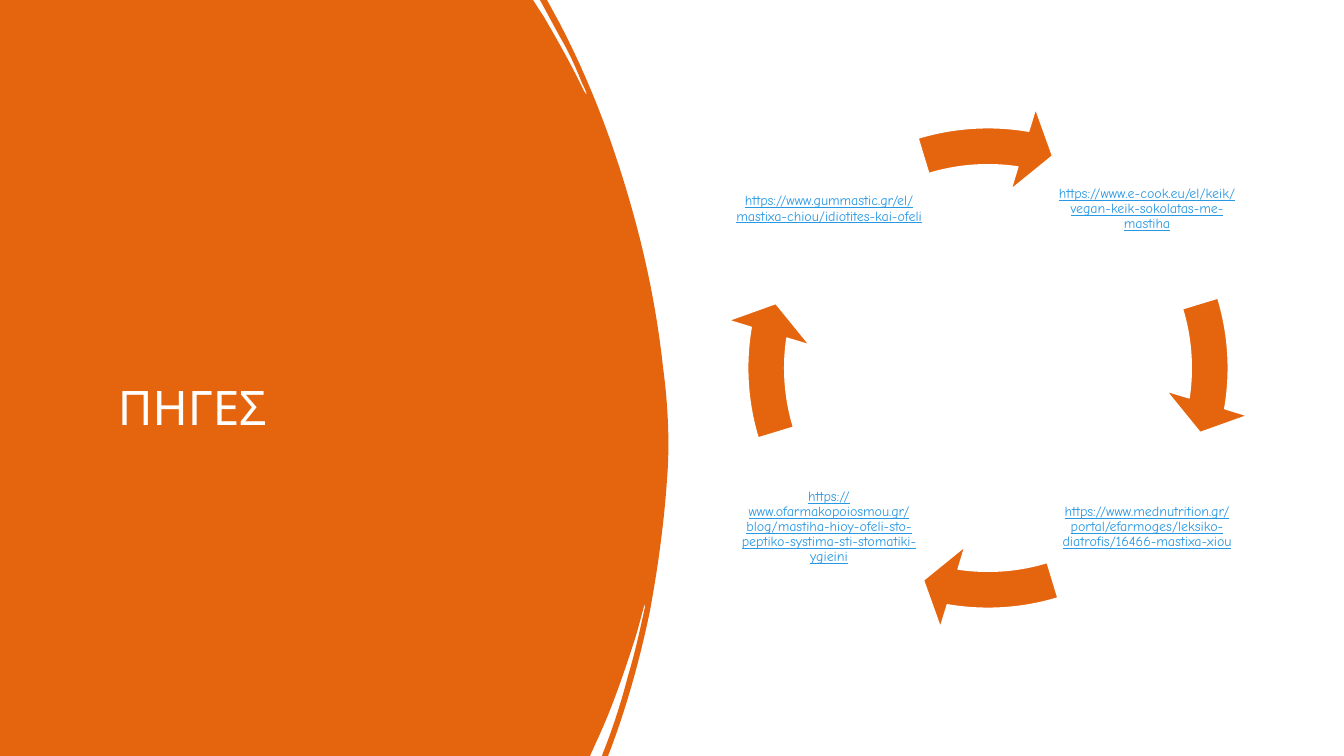
from lxml.etree import SubElement
from pptx import Presentation
from pptx.dml.color import RGBColor
from pptx.enum.shapes import MSO_SHAPE
from pptx.enum.text import MSO_ANCHOR, PP_ALIGN
from pptx.oxml.ns import qn
from pptx.util import Pt

PX = 914400 / 100.8
FONT = "Comic Neue"
ORANGE, WHITE, LINK = "E4650E", "FFFFFF", "2998E3"

PANEL_EDGE = [
    (533, 0), (544, 17),
    (558, 41, 572, 66, 584, 91), (585, 93, 586, 94, 587, 95),
    (586, 91, 584, 87, 582, 83), (576, 68, 569, 52, 560, 37),
    (540, 0), (547, 0), (559, 22),
    (581, 64, 599, 107, 614, 151), (638, 222, 655, 293, 663, 367),
    (668, 404, 670, 443, 667, 480), (664, 524, 658, 567, 650, 611),
    (640, 659, 627, 706, 610, 751),
    (608, 756), (602, 756), (603, 753),
    (613, 728, 621, 703, 628, 676), (635, 653, 640, 630, 645, 607),
    (645, 606, 645, 605, 645, 603), (641, 617, 638, 630, 634, 642),
    (624, 673, 613, 705, 600, 734),
    (590, 756), (0, 756),
]

SOURCES = [
    (1053, 115, "https://www.e-cook.eu/el/keik/vegan-keik-sokolatas-me-mastiha"),
    (1053, 433, "https://www.mednutrition.gr/portal/efarmoges/leksiko-diatrofis/16466-mastixa-xiou"),
    (735, 433, "https://www.ofarmakopoiosmou.gr/blog/mastiha-hioy-ofeli-sto-peptiko-systima-sti-stomatiki-ygieini"),
    (735, 115, "https://www.gummastic.gr/el/mastixa-chiou/idiotites-kai-ofeli"),
]


def px(n):
    return round(n * PX)


def color(value):
    return RGBColor.from_string(value)


def paint(s, fill):
    s.shadow.inherit = False
    s.fill.solid()
    s.fill.fore_color.rgb = color(fill)


def bend(line, controls):
    line.tag = qn("a:cubicBezTo")
    for i in (0, 2):
        pt = SubElement(line, qn("a:pt"), x=str(px(controls[i])), y=str(px(controls[i + 1])))
        line.insert(i // 2, pt)


def add_panel(slide):
    builder = slide.shapes.build_freeform(0, 0, scale=1.0)
    builder.add_line_segments([(px(x), px(y)) for *_, x, y in PANEL_EDGE], close=True)
    s = builder.convert_to_shape()
    lines = list(s._element.iter(qn("a:lnTo")))
    for line, (*controls, _, _) in zip(lines, PANEL_EDGE):
        if controls:
            bend(line, controls)
    paint(s, ORANGE)
    s.line.fill.background()


def add_text(slide, box, insets, text, size, fill, align=PP_ALIGN.LEFT, underline=False):
    tf = slide.shapes.add_textbox(*map(px, box)).text_frame
    tf.word_wrap = True
    tf.vertical_anchor = MSO_ANCHOR.MIDDLE
    tf.margin_left, tf.margin_top, tf.margin_right, tf.margin_bottom = map(px, insets)
    p = tf.paragraphs[0]
    p.alignment = align
    p.line_spacing = 0.9
    r = p.add_run()
    r.text = text
    r.font.name = FONT
    r.font.size = Pt(size)
    r.font.color.rgb = color(fill)
    r.font.underline = underline


def add_cycle_arrow(slide, quarter):
    s = slide.shapes.add_shape(MSO_SHAPE.CIRCULAR_ARROW, px(724), px(104), px(528), px(528))
    turn = 54 * quarter
    values = 0.07, 4.65, 5.5 + turn, (205.85 + turn) % 216, 0.08
    for i, value in enumerate(values):
        s.adjustments[i] = value
    paint(s, ORANGE)
    s.line.color.rgb = color(WHITE)
    s.line.width = Pt(1)


def main():
    prs = Presentation()
    prs.slide_width, prs.slide_height = px(1344), px(756)
    slide = prs.slides.add_slide(prs.slide_layouts[6])
    add_panel(slide)
    add_text(slide, (93, 71, 461, 614), (25, 64, 10, 0), "ΠΗΓΕΣ", 34, WHITE)
    for quarter, (x, y, address) in enumerate(SOURCES):
        add_text(slide, (x, y, 188, 188), (1, 1, 1, 1), address, 10, LINK, PP_ALIGN.CENTER, True)
        add_cycle_arrow(slide, quarter)
    prs.save("out.pptx")


if __name__ == "__main__":
    main()
